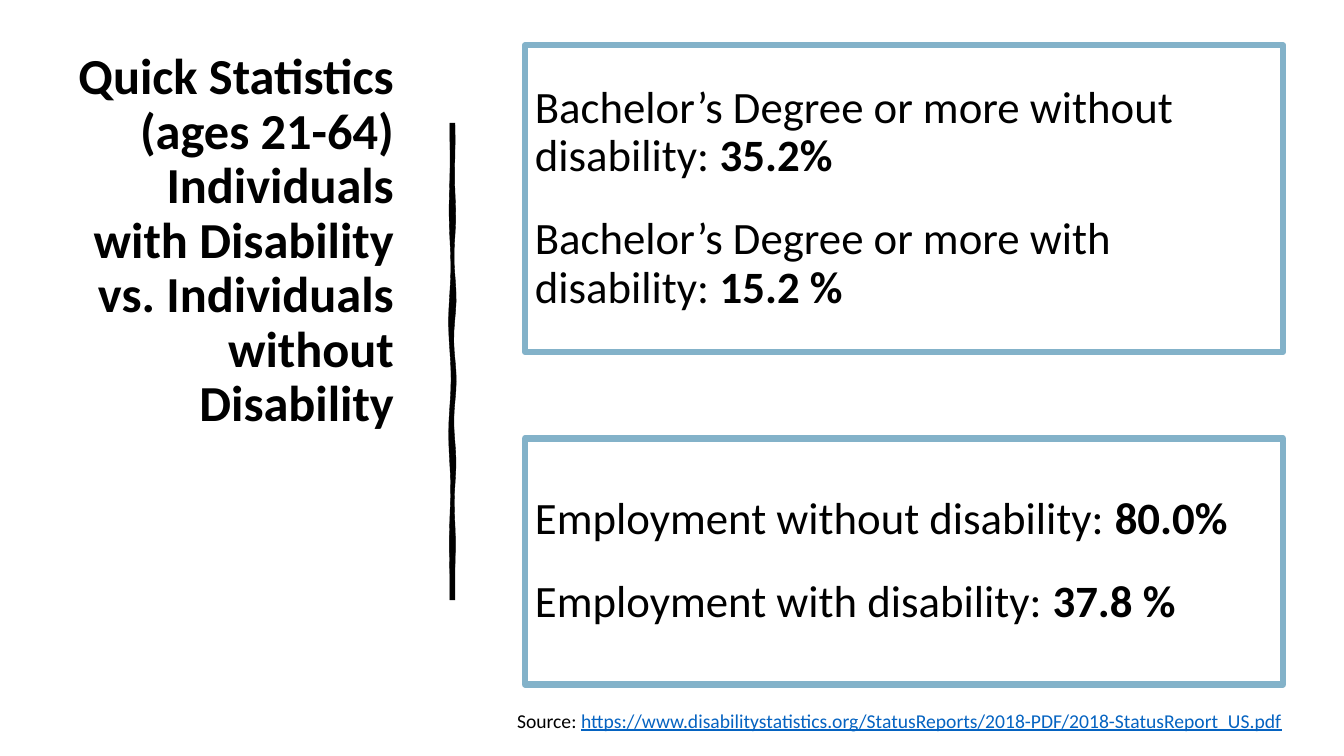
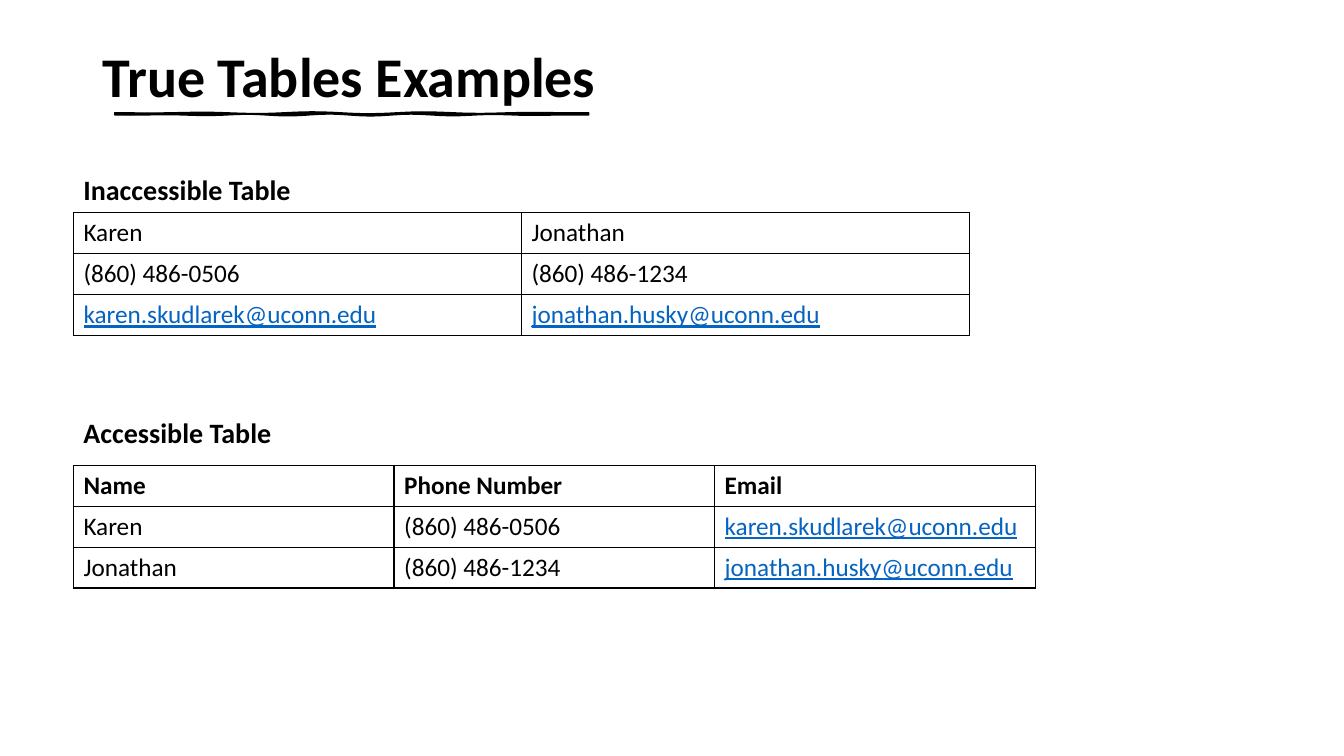
import math

from lxml import etree
from pptx import Presentation
from pptx import util as u
from pptx.dml.color import RGBColor
from pptx.enum import shapes, text
from pptx.oxml.ns import qn

BLACK = RGBColor(0x00, 0x00, 0x00)
LINK_BLUE = RGBColor(0x05, 0x63, 0xC1)
FRAME_BLUE = RGBColor(0x83, 0xB2, 0xC9)
FONT = "Calibri"
TITLE_ONLY = 5

PLAIN = {"bold": False}
BOLD = {"bold": True}
LINK = {"bold": False, "underline": True, "color": LINK_BLUE}
TITLE_LINES = {"line_spacing": 0.9}

KAREN = ("Karen", "(860) 486-0506", "karen.skudlarek@uconn.edu")
JONATHAN = ("Jonathan", "(860) 486-1234", "jonathan.husky@uconn.edu")


def set_values(target, values):
    for name, value in values.items():
        setattr(target, name, value)


def add_span(para, words, size, style):
    span = para.add_run()
    span.text = words
    values = {"name": FONT, "size": u.Pt(size), **style}
    span.font.color.rgb = values.pop("color", BLACK)
    set_values(span.font, values)


def place(shape, box):
    set_values(shape, dict(zip(("left", "top", "width", "height"), map(u.Pt, box))))


def add_title_page(deck, title, box, size, anchor, align):
    page = deck.slides.add_slide(deck.slide_layouts[TITLE_ONLY])
    place(page.shapes.title, box)
    frame = page.shapes.title.text_frame
    set_values(frame, {"word_wrap": True, "vertical_anchor": anchor,
                       "auto_size": text.MSO_AUTO_SIZE.NONE})
    para = frame.paragraphs[0]
    set_values(para, {"alignment": align, **TITLE_LINES})
    for number, line in enumerate(title):
        if number:
            para.add_line_break()
        add_span(para, line, size, BOLD)
    return page


def add_text_line(page, box, spans, size):
    frame = page.shapes.add_textbox(*map(u.Pt, box)).text_frame
    frame.word_wrap = True
    for words, style in spans:
        add_span(frame.paragraphs[0], words, size, style)


def add_fact_panel(page, box, facts):
    """Framed panel with one label and bold figure per paragraph."""
    panel = page.shapes.add_shape(shapes.MSO_SHAPE.RECTANGLE, *map(u.Pt, box))
    panel.shadow.inherit = False
    panel.fill.background()
    panel.line.color.rgb = FRAME_BLUE
    panel.line.width = u.Pt(4.5)
    etree.SubElement(panel.element.spPr.find(qn("a:ln")), qn("a:round"))
    frame = panel.text_frame
    set_values(frame, {"word_wrap": True, "vertical_anchor": text.MSO_ANCHOR.MIDDLE})
    for number, (label, figure) in enumerate(facts):
        para = frame.add_paragraph() if number else frame.paragraphs[0]
        set_values(para, {"alignment": text.PP_ALIGN.LEFT, "line_spacing": 0.9,
                          "space_before": u.Pt(25 if number else 0)})
        add_span(para, label + " ", 32, PLAIN)
        add_span(para, figure, 32, BOLD)


def add_brush_stroke(page, box, line_width, wobble, steps=48):
    """Long thin outline with wavering sides, along the longer side of the box."""
    left, top, width, height = box
    length, thickness = max(width, height), min(width, height)

    def point(step, side):
        along = length * step / steps
        drift = wobble * math.sin(step * (0.55 + 0.2 * side) + side)
        across = side * thickness + drift * math.sin(math.pi * step / steps)
        x, y = (along, across) if width > height else (across, along)
        return u.Pt(left + x), u.Pt(top + y)

    outline = [point(step, 0) for step in range(steps + 1)]
    outline += [point(step, 1) for step in range(steps, -1, -1)]
    builder = page.shapes.build_freeform(*outline[0])
    builder.add_line_segments(outline[1:], close=True)
    stroke = builder.convert_to_shape()
    stroke.shadow.inherit = False
    stroke.fill.solid()
    stroke.fill.fore_color.rgb = BLACK
    stroke.line.color.rgb = BLACK
    stroke.line.width = u.Pt(line_width)


def add_cell_borders(cell):
    properties = cell._tc.get_or_add_tcPr()
    for side in ("lnL", "lnR", "lnT", "lnB"):
        border = etree.SubElement(properties, qn(f"a:{side}"), w=str(u.Pt(1)))
        fill = etree.SubElement(border, qn("a:solidFill"))
        etree.SubElement(fill, qn("a:srgbClr"), val=str(BLACK))


def add_contact_table(page, box, rows, header):
    table = page.shapes.add_table(len(rows), len(rows[0]), *map(u.Pt, box)).table
    set_values(table, {"first_row": header, "horz_banding": False})
    for row_number, row in enumerate(rows):
        for column_number, words in enumerate(row):
            cell = table.cell(row_number, column_number)
            add_cell_borders(cell)
            cell.fill.background()
            style = LINK if "@" in words else PLAIN
            if header and row_number == 0:
                style = BOLD
            add_span(cell.text_frame.paragraphs[0], words, 18, style)


def build_statistics(deck):
    page = add_title_page(
        deck,
        ("Quick Statistics",
         "(ages 21-64) Individuals with Disability vs. Individuals without Disability"),
        (36.7, 46, 252, 266.5), 36, text.MSO_ANCHOR.BOTTOM, text.PP_ALIGN.RIGHT)
    add_fact_panel(page, (375, 32.4, 541.5, 219), (
        ("Bachelor’s Degree or more without disability:", "35.2%"),
        ("Bachelor’s Degree or more with disability:", "15.2 %")))
    add_fact_panel(page, (375, 313.2, 541.5, 175.7), (
        ("Employment without disability:", "80.0%"),
        ("Employment with disability:", "37.8 %")))
    add_text_line(page, (362.2, 502.5, 586, 24.5), (
        ("Source: ", PLAIN),
        ("https://www.disabilitystatistics.org/StatusReports/2018-PDF/"
         "2018-StatusReport_US.pdf", LINK)), 14)
    add_brush_stroke(page, (321.3, 88, 3.7, 340.5), 0.25, 0.9)


def build_tables(deck):
    page = add_title_page(deck, ("True Tables Examples",), (66, 4.3, 834, 104.4), 40,
                          text.MSO_ANCHOR.MIDDLE, text.PP_ALIGN.LEFT)
    left = 52.5
    add_text_line(page, (left, 119.5, 238, 31.5), (("Inaccessible Table", BOLD),), 20)
    add_contact_table(page, (left, 152, 640, 87.6), list(zip(KAREN, JONATHAN)), False)
    add_text_line(page, (left, 293, 238, 31.5), (("Accessible Table", BOLD),), 20)
    add_contact_table(page, (left, 332.4, 687, 87.6),
                      [("Name", "Phone Number", "Email"), KAREN, JONATHAN], True)
    add_brush_stroke(page, (82, 80.6, 338.5, 1.5), 1, 0.7)


def main():
    deck = Presentation()
    set_values(deck, {"slide_width": u.Pt(960), "slide_height": u.Pt(540)})
    build_statistics(deck)
    build_tables(deck)
    deck.save("out.pptx")


if __name__ == "__main__":
    main()
